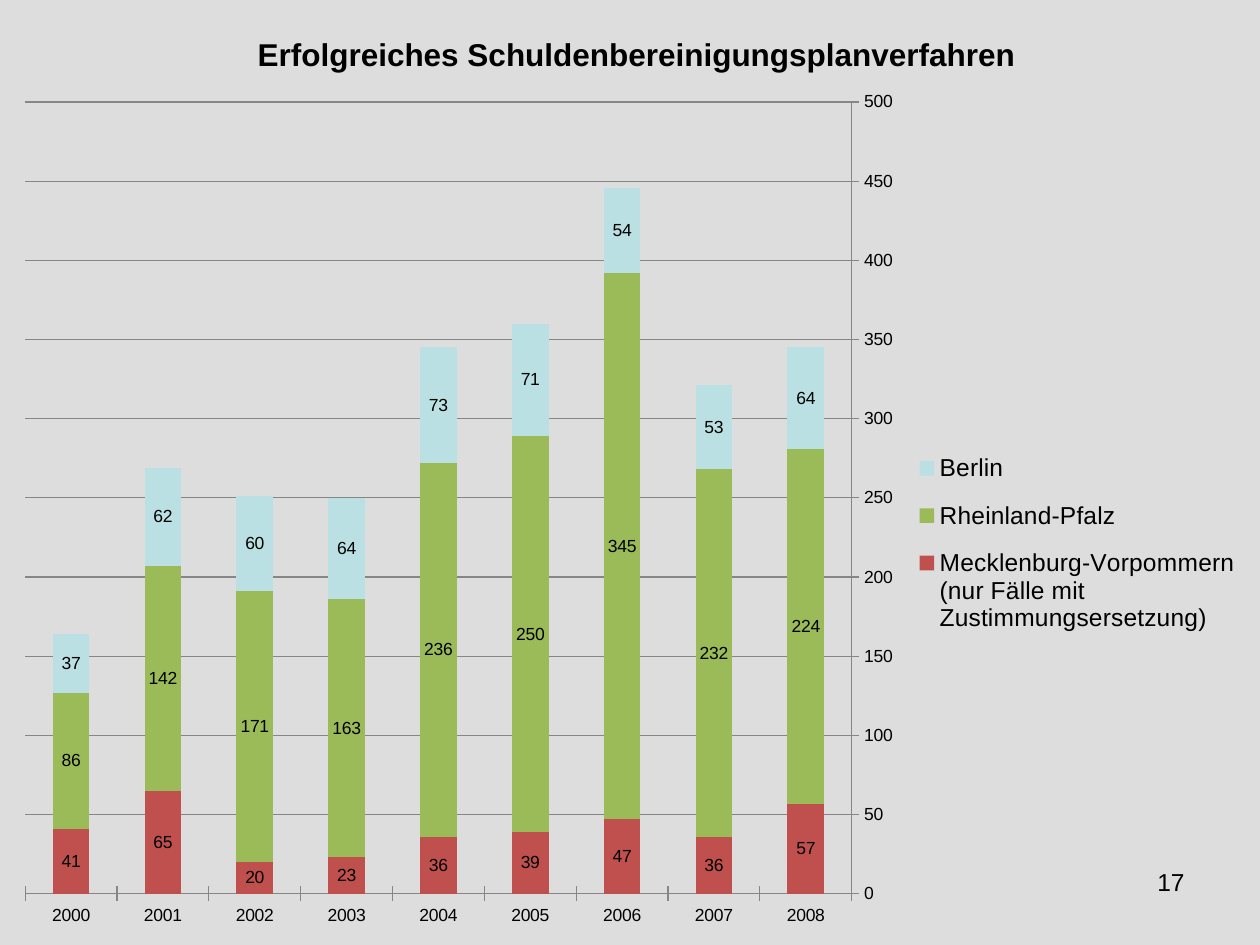
from dataclasses import dataclass

from lxml import etree
from pptx import Presentation
from pptx.chart.data import CategoryChartData
from pptx.dml.color import RGBColor
from pptx.enum import chart as ch, text
from pptx.oxml import ns
from pptx.util import Pt

BACKGROUND = RGBColor(0xDD, 0xDD, 0xDD)
BLACK = RGBColor(0, 0, 0)
GREY = RGBColor(0x86, 0x86, 0x86)
RED = RGBColor(0xC0, 0x50, 0x4D)
GREEN = RGBColor(0x9B, 0xBB, 0x59)
LIGHT_BLUE = RGBColor(0xBB, 0xE0, 0xE3)
FONT = "Arial"
WIDTH, HEIGHT = 720, 540


@dataclass
class State:
    name: str
    values: tuple[int, ...]
    color: RGBColor


YEARS = [str(year) for year in range(2008, 1999, -1)]
STATES = [
    State("Mecklenburg-Vorpommern (nur Fälle mit Zustimmungsersetzung)",
          (57, 36, 47, 39, 36, 23, 20, 65, 41), RED),
    State("Rheinland-Pfalz", (224, 232, 345, 250, 236, 163, 171, 142, 86), GREEN),
    State("Berlin ", (64, 53, 54, 71, 73, 64, 60, 62, 37), LIGHT_BLUE),
]


def set_font(font, size: float, bold: bool = False) -> None:
    font.name, font.size, font.bold = FONT, Pt(size), bold
    font.color.rgb = BLACK


def add_text(s, content: str, *, left: float, top: float, width: float,
             height: float, size: float, align) -> None:
    tf = s.shapes.add_textbox(Pt(left), Pt(top), Pt(width), Pt(height)).text_frame
    tf.word_wrap = True
    p = tf.paragraphs[0]
    p.alignment = align
    r = p.add_run()
    r.text = content
    set_font(r.font, size)


def set_layout(parent, index: int, **fractions: float) -> None:
    """Place a chart part by fractions of the chart area."""
    for old in parent.findall(ns.qn("c:layout")):
        parent.remove(old)
    layout = etree.Element(ns.qn("c:layout"))
    manual = etree.SubElement(layout, ns.qn("c:manualLayout"))
    if parent.tag == ns.qn("c:plotArea"):
        etree.SubElement(manual, ns.qn("c:layoutTarget")).set("val", "inner")
    for mode in ("xMode", "yMode"):
        etree.SubElement(manual, ns.qn(f"c:{mode}")).set("val", "edge")
    for key, value in fractions.items():
        etree.SubElement(manual, ns.qn(f"c:{key}")).set("val", str(value))
    parent.insert(index, layout)


def style_line(line) -> None:
    line.color.rgb = GREY
    line.width = Pt(0.75)


def style_axis(axis) -> None:
    axis.major_tick_mark = ch.XL_TICK_MARK.CROSS
    axis.minor_tick_mark = ch.XL_TICK_MARK.NONE
    style_line(axis.format.line)
    set_font(axis.tick_labels.font, 10)


def add_debt_chart(s) -> None:
    data = CategoryChartData()
    data.categories = YEARS
    for state in STATES:
        data.add_series(state.name, state.values)
    chart = s.shapes.add_chart(ch.XL_CHART_TYPE.COLUMN_STACKED, 0, 0,
                               Pt(WIDTH), Pt(HEIGHT), data).chart
    set_font(chart.font, 10)

    # Title
    chart.has_title = True
    p = chart.chart_title.text_frame.paragraphs[0]
    r = p.add_run()
    r.text = "Erfolgreiches Schuldenbereinigungsplanverfahren"
    set_font(r.font, 18, bold=True)
    chart.chart_title.include_in_layout = False
    set_layout(chart.chart_title._element, 1, x=0.2, y=0.03)

    # Axes: years run backwards, so the value axis stands on the right
    years, counts = chart.category_axis, chart.value_axis
    for axis in (years, counts):
        style_axis(axis)
    years.reverse_order = True
    counts.minimum_scale, counts.maximum_scale, counts.major_unit = 0, 500, 50
    counts.has_major_gridlines = True
    style_line(counts.major_gridlines.format.line)

    # Columns
    plot = chart.plots[0]
    plot.gap_width, plot.overlap, plot.vary_by_categories = 150, 100, False
    for series, state in zip(plot.series, STATES):
        series.format.fill.solid()
        series.format.fill.fore_color.rgb = state.color
        labels = series.data_labels
        labels.show_value = True
        set_font(labels.font, 10)
    set_layout(chart._chartSpace.chart.plotArea, 0, x=0.02, y=0.108, w=0.656, h=0.838)

    # Legend
    chart.has_legend = True
    chart.legend.position = ch.XL_LEGEND_POSITION.RIGHT
    chart.legend.include_in_layout = False
    set_font(chart.legend.font, 14)
    set_layout(chart.legend._element, 1, x=0.72, y=0.46, w=0.27, h=0.23)


def main() -> None:
    prs = Presentation()
    prs.slide_width, prs.slide_height = Pt(WIDTH), Pt(HEIGHT)
    s = prs.slides.add_slide(prs.slide_layouts[6])
    s.background.fill.solid()
    s.background.fill.fore_color.rgb = BACKGROUND

    # Page number, then the chart over the whole slide
    add_text(s, "17", left=516, top=492, width=168, height=37.5, size=14,
             align=text.PP_ALIGN.RIGHT)
    add_debt_chart(s)
    prs.save("out.pptx")


if __name__ == "__main__":
    main()
